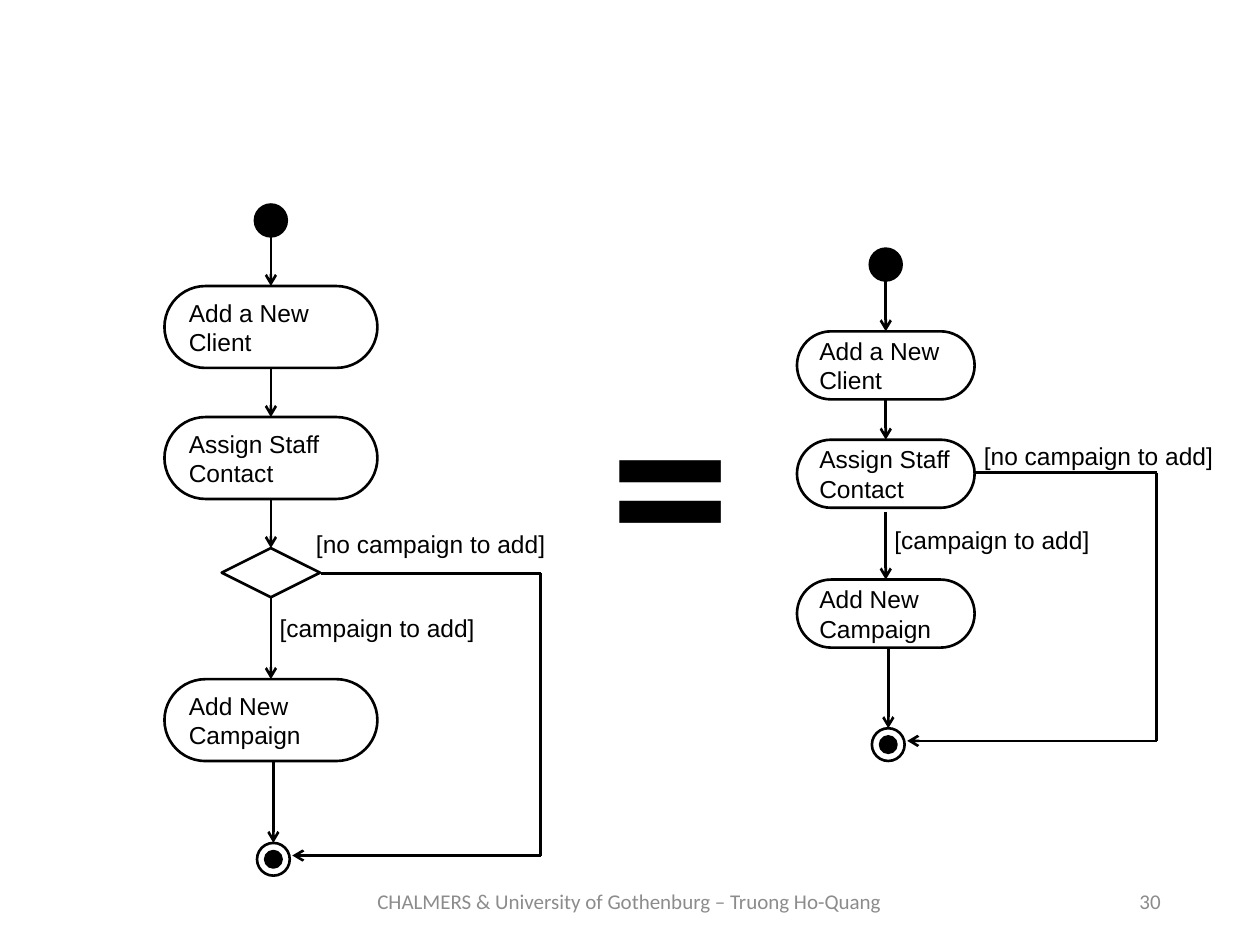
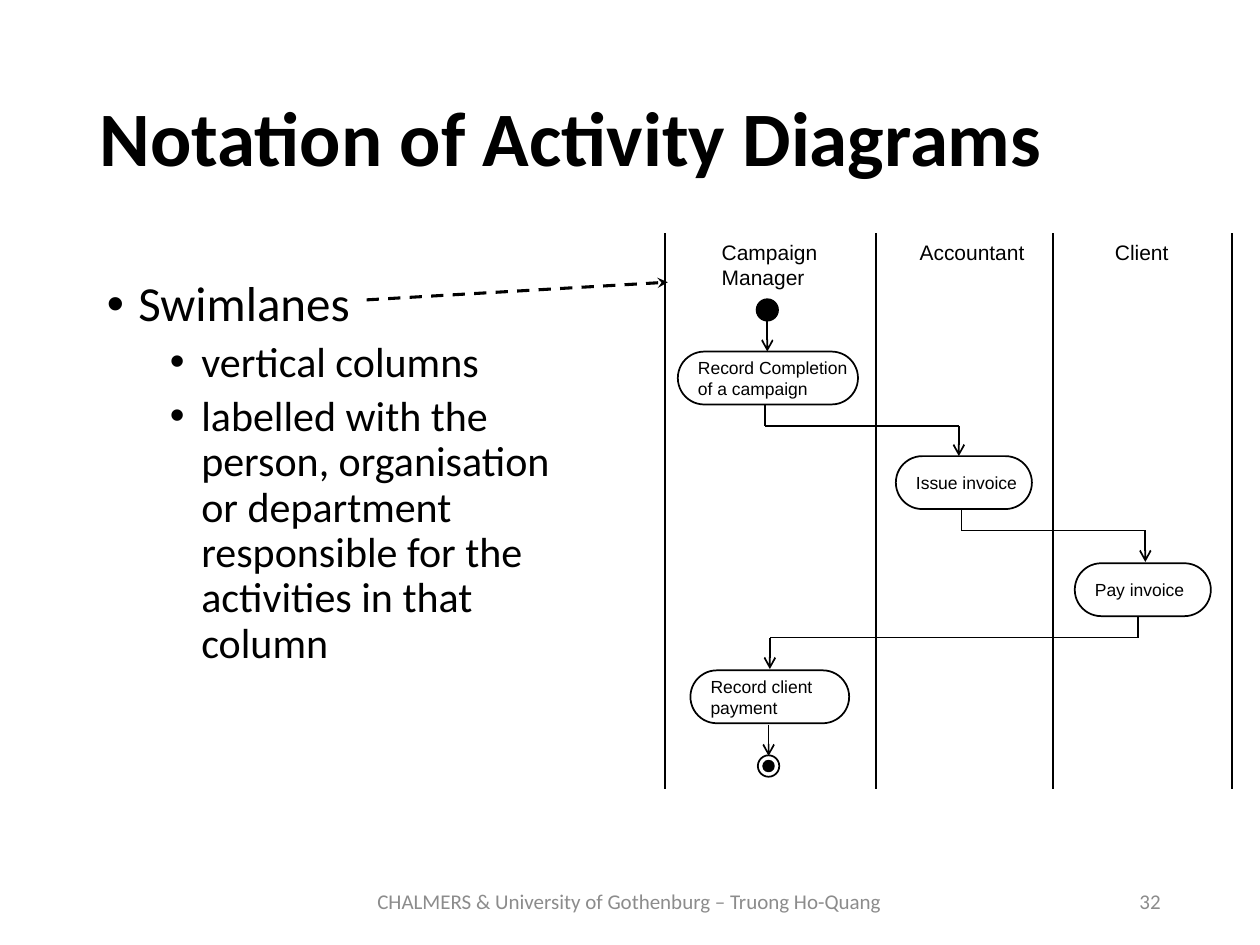
"""Builds two slides on the notation of UML activity diagrams."""
from itertools import pairwise

from lxml.etree import SubElement
from pptx import Presentation
from pptx.dml.color import RGBColor
from pptx.enum.dml import MSO_LINE_DASH_STYLE as Dash
from pptx.enum.shapes import MSO_CONNECTOR as Connector, MSO_SHAPE as Shape
from pptx.enum.text import MSO_ANCHOR as Anchor, PP_ALIGN as Align
from pptx.oxml.ns import qn
from pptx.util import Inches, Pt

BLACK, WHITE, GREY = "000000", "FFFFFF", "8C8C8C"
BODY_FONT, DIAGRAM_FONT = "Calibri", "Arial"
TITLE_ONLY, BLANK = 5, 6
FOOTER = "CHALMERS & University of Gothenburg – Truong Ho-Quang"


def color(value):
    return RGBColor.from_string(value)


def inches(*lengths):
    return [Inches(length) for length in lengths]


def format_runs(paragraph, size, font, ink=BLACK, bold=False):
    for run in paragraph.runs:
        run.font.size = Pt(size)
        run.font.name = font
        run.font.bold = bold
        run.font.color.rgb = color(ink)


def write_text(shape, lines, size=14, font=DIAGRAM_FONT, ink=BLACK, bold=False,
               align=Align.LEFT, anchor=Anchor.TOP, wrap=True, spacing=None):
    frame = shape.text_frame
    frame.word_wrap = wrap
    frame.vertical_anchor = anchor
    frame.text = lines
    for paragraph in frame.paragraphs:
        paragraph.alignment = align
        if spacing:
            paragraph.line_spacing = spacing
        format_runs(paragraph, size, font, ink, bold)


def add_label(slide, box, lines, **text_format):
    write_text(slide.shapes.add_textbox(*inches(*box)), lines, **text_format)


def add_node(slide, kind, box, fill=WHITE, weight=1.5):
    node = slide.shapes.add_shape(kind, *inches(*box))
    node.shadow.inherit = False
    node.fill.solid()
    node.fill.fore_color.rgb = color(fill)
    node.line.color.rgb = color(BLACK)
    node.line.width = Pt(weight)
    return node


def add_activity(slide, box, lines, size=14, weight=1.5):
    activity = add_node(slide, Shape.ROUNDED_RECTANGLE, box, weight=weight)
    activity.adjustments[0] = 0.5
    write_text(activity, lines, size=size, anchor=Anchor.MIDDLE, wrap=False)


def add_circle(slide, center, diameter, fill=BLACK, weight=1.5):
    x, y = center
    box = (x - diameter / 2, y - diameter / 2, diameter, diameter)
    add_node(slide, Shape.OVAL, box, fill, weight)


def add_end(slide, center, diameter, weight=1.5):
    add_circle(slide, center, diameter, WHITE, weight)
    add_circle(slide, center, diameter / 2, BLACK, weight)


def add_line(slide, start, end, weight=1.5, head=None, dash=None):
    connector = slide.shapes.add_connector(Connector.STRAIGHT, *inches(*start, *end))
    connector.line.color.rgb = color(BLACK)
    connector.line.width = Pt(weight)
    if dash:
        connector.line.dash_style = dash
    if head:
        SubElement(connector.get_or_add_ln(), qn("a:tailEnd"), type=head)
    SubElement(connector.element.spPr, qn("a:effectLst"))


def add_route(slide, *points, weight=1.5):
    """Join the points with straight lines, the last one an arrow."""
    legs = list(pairwise(points))
    for start, end in legs[:-1]:
        add_line(slide, start, end, weight)
    add_line(slide, *legs[-1], weight, head="arrow")


def add_footer(slide, number):
    style = dict(size=12, font=BODY_FONT, ink=GREY, anchor=Anchor.MIDDLE)
    add_label(slide, (7.06, 6.95, 2.25, 0.4), str(number), align=Align.RIGHT, **style)
    add_label(slide, (2.72, 6.95, 4.55, 0.4), FOOTER, align=Align.CENTER, **style)


def add_title(slide, title):
    placeholder = slide.shapes.title
    placeholder.left, placeholder.top, placeholder.width, placeholder.height = inches(
        0.69, 0.4, 8.62, 1.45)
    write_text(placeholder, title, size=44, font=BODY_FONT, bold=True,
               anchor=Anchor.MIDDLE, spacing=0.9)


def add_bullets(slide, box, items):
    frame = slide.shapes.add_textbox(*inches(*box)).text_frame
    frame.word_wrap = True
    for index, (level, text) in enumerate(items):
        paragraph = frame.add_paragraph() if index else frame.paragraphs[0]
        paragraph.text = text
        paragraph.level = level
        properties = paragraph._p.get_or_add_pPr()
        properties.set("marL", str(Inches(0.25 + 0.5 * level)))
        properties.set("indent", str(Inches(-0.25)))
        SubElement(properties, qn("a:buFont"), typeface="Arial")
        SubElement(properties, qn("a:buChar"), char="•")
        paragraph.line_spacing = 0.9
        if index:
            paragraph.space_before = Pt(5)
        format_runs(paragraph, 24 if level else 28, BODY_FONT)


def add_client_flow(slide, center, start_y, tops, size, end_y, links, exit_route):
    """Draw start, three activities and end down one column, with a side exit."""
    width, height = size
    names = ("Add a New\nClient", "Assign Staff\nContact", "Add New\nCampaign")
    for name, top in zip(names, tops):
        add_activity(slide, (center - width / 2, top, width, height), name)
    add_circle(slide, (center, start_y), 0.26, weight=1)
    end_x = center + 0.02
    add_end(slide, (end_x, end_y), 0.26)
    for top, bottom in [(start_y + 0.13, tops[0]), (tops[0] + height, tops[1]), *links]:
        add_route(slide, (center, top), (center, bottom))
    add_route(slide, (end_x, tops[2] + height), (end_x, end_y - 0.13))
    exit_x, exit_y, side_x = exit_route
    return_y = end_y - 0.03
    add_route(slide, (exit_x, exit_y), (side_x, exit_y), (side_x, return_y),
              (end_x + 0.15, return_y))


def build_decision_slide(presentation):
    slide = presentation.slides.add_slide(presentation.slide_layouts[BLANK])
    add_footer(slide, 30)
    add_label(slide, (2.12, 4.82, 2.08, 0.33), "[campaign to add]")
    add_label(slide, (2.41, 4.15, 2.36, 0.33), "[no campaign to add]")
    add_node(slide, Shape.DIAMOND, (1.76, 4.35, 0.78, 0.39))
    add_client_flow(slide, 2.15, 1.75, (2.27, 3.31, 5.39), (1.69, 0.65), 6.82,
                    [(3.96, 4.35), (4.74, 5.39)], (2.55, 4.55, 4.29))
    add_label(slide, (7, 4.12, 2.07, 0.33), "[campaign to add]")
    add_label(slide, (7.71, 3.45, 2.3, 0.33), "[no campaign to add]")
    add_client_flow(slide, 7.03, 2.1, (2.63, 3.49, 4.6), (1.41, 0.54), 5.91,
                    [(4.06, 4.6)], (7.73, 3.75, 9.18))
    add_label(slide, (4.75, 2.55, 1.17, 2.42), "=", size=138, font=BODY_FONT,
              bold=True, wrap=False)


def build_swimlane_slide(presentation):
    slide = presentation.slides.add_slide(presentation.slide_layouts[TITLE_ONLY])
    add_title(slide, "Notation of Activity Diagrams")
    add_footer(slide, 32)
    add_bullets(slide, (0.75, 2.17, 8.5, 4.5), [
        (0, "Swimlanes"),
        (1, "vertical columns"),
        (1, "labelled with the\vperson, organisation\vor department\v"
            "responsible for the\vactivities in that\vcolumn"),
    ])
    for x in (5.28, 6.95, 8.36, 9.78):
        add_line(slide, (x, 1.85), (x, 6.26), 1)
    for left, width, height, lane in [(5.63, 1.06, 0.5, "Campaign\nManager"),
                                      (7.2, 1.13, 0.3, "Accountant"),
                                      (8.75, 0.72, 0.3, "Client")]:
        add_label(slide, (left, 1.85, width, height), lane, size=12)
    for left, top, width, name in [
        (5.38, 2.79, 1.43, "Record Completion\nof a campaign"),
        (7.11, 3.62, 1.08, "Issue invoice"),
        (8.53, 4.47, 1.08, "Pay invoice"),
        (5.48, 5.32, 1.26, "Record client\npayment"),
    ]:
        add_activity(slide, (left, top, width, 0.42), name, size=10, weight=1)
    add_circle(slide, (6.09, 2.46), 0.17, weight=1)
    add_end(slide, (6.1, 6.08), 0.17, weight=1)
    for route in [
        [(6.09, 2.54), (6.09, 2.79)],
        [(6.07, 3.21), (6.07, 3.38), (7.61, 3.38), (7.61, 3.62)],
        [(7.63, 4.04), (7.63, 4.21), (9.09, 4.21), (9.09, 4.46)],
        [(9.03, 4.89), (9.03, 5.06), (6.11, 5.06), (6.11, 5.31)],
        [(6.1, 5.75), (6.1, 6)],
    ]:
        add_route(slide, *route, weight=1)
    add_line(slide, (2.91, 2.38), (5.3, 2.24), 1.75, head="stealth", dash=Dash.DASH)


def main():
    presentation = Presentation()
    presentation.slide_width, presentation.slide_height = inches(10, 7.5)
    build_decision_slide(presentation)
    build_swimlane_slide(presentation)
    presentation.save("out.pptx")


if __name__ == "__main__":
    main()
